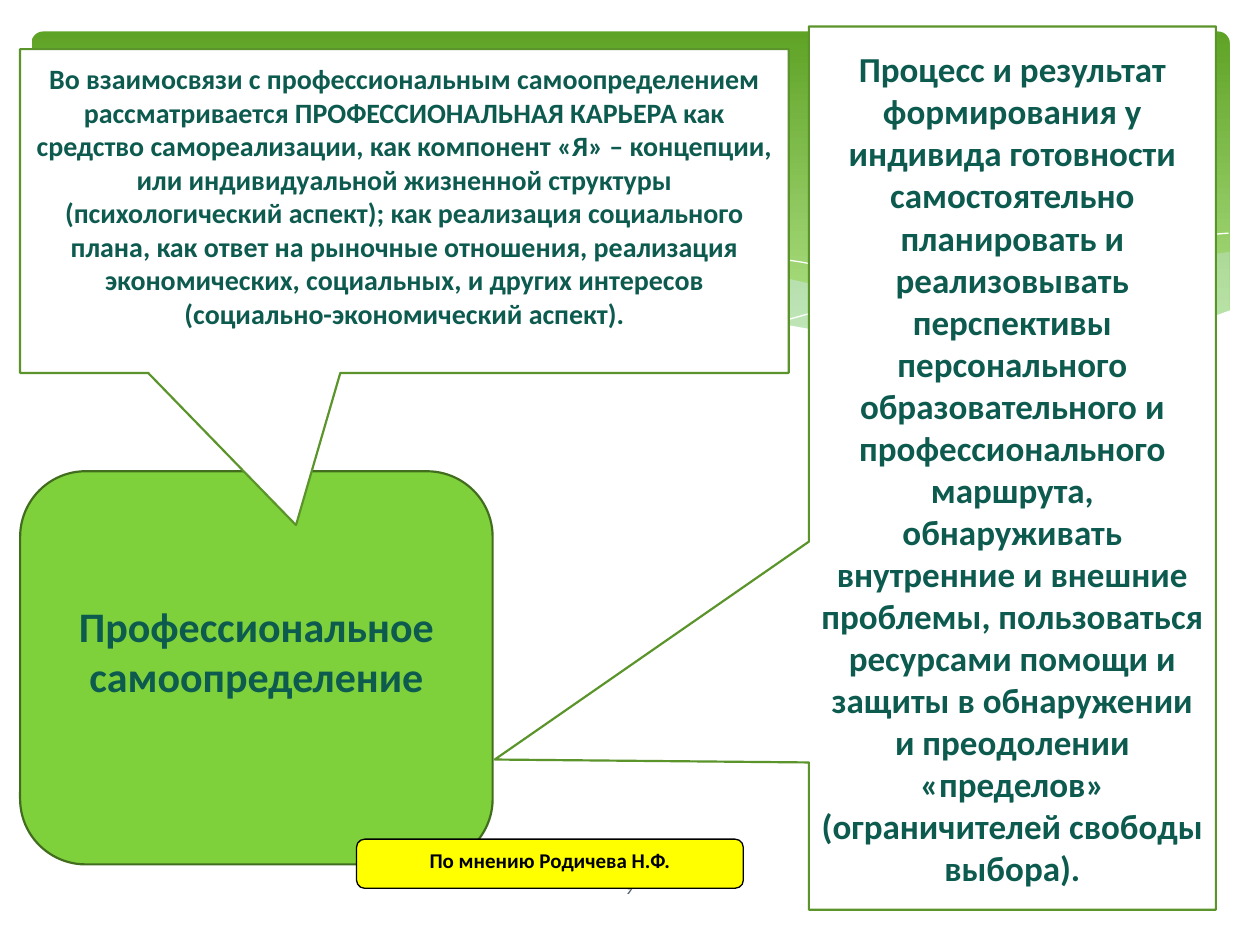
from lxml import etree
from pptx import Presentation
from pptx.dml.color import RGBColor
from pptx.enum.shapes import MSO_SHAPE as SHAPE
from pptx.enum.text import MSO_ANCHOR as ANCHOR, PP_ALIGN as ALIGN
from pptx.oxml.ns import qn
from pptx.util import Inches, Pt

FONT = "Calibri"
WHITE = RGBColor(0xFF, 0xFF, 0xFF)
BLACK = RGBColor(0x00, 0x00, 0x00)
YELLOW = RGBColor(0xFF, 0xFF, 0x00)
GREEN = RGBColor(0x7F, 0xD1, 0x3B)
GREEN_LINE = RGBColor(0x5A, 0x94, 0x2A)
DARK_LINE = RGBColor(0x42, 0x6D, 0x1F)
BANNER_TOP = RGBColor(0x5F, 0xA3, 0x26)
BANNER_BOTTOM = RGBColor(0xB2, 0xE3, 0x89)
MIST = RGBColor(0xD6, 0xEC, 0xFF)
TEAL = RGBColor(0x0D, 0x5A, 0x4F)
SLATE = RGBColor(0x4E, 0x5B, 0x6F)

# Content
CONCEPT = "Профессиональное самоопределение"
CAREER = (
    "Во взаимосвязи с профессиональным самоопределением рассматривается "
    "ПРОФЕССИОНАЛЬНАЯ КАРЬЕРА как средство самореализации, как компонент «Я» – "
    "концепции, или индивидуальной жизненной структуры (психологический аспект); "
    "как реализация социального плана, как ответ на рыночные отношения, реализация "
    "экономических, социальных, и других интересов (социально-экономический аспект).")
PROCESS = (
    "Процесс и результат формирования у индивида готовности самостоятельно "
    "планировать и реализовывать перспективы персонального образовательного и "
    "профессионального маршрута, обнаруживать внутренние и внешние проблемы, "
    "пользоваться ресурсами помощи и защиты в обнаружении и преодолении «пределов» "
    "(ограничителей свободы выбора).")
AUTHOR = "По мнению Родичева Н.Ф."
PAGE = "9"

# Banner waves, in hundredths of an inch: points, fill, opacity in percent
WAVES = [
    ([(975, 200), (948, 204), (921, 210), (891, 216), (861, 223), (805, 237),
      (753, 248), (706, 257), (661, 265), (691, 269), (732, 274), (769, 277),
      (803, 278), (844, 277), (881, 273), (913, 267), (942, 259), (963, 252),
      (976, 247), (976, 200)], MIST, 29),
    ([(893, 273), (837, 265), (775, 254), (706, 240), (629, 222), (584, 211),
      (541, 203), (489, 194), (442, 189), (399, 186), (361, 185), (328, 187),
      (286, 191), (342, 199), (404, 211), (449, 222), (530, 240), (601, 255),
      (665, 266), (722, 274), (773, 277), (818, 278), (857, 277), (893, 273)], MIST, 40),
    ([(309, 195), (344, 190), (387, 187), (433, 187), (489, 190), (533, 194),
      (582, 200), (636, 208), (695, 219), (760, 233), (831, 251), (907, 272)], None, 100),
    ([(613, 257), (653, 246), (695, 235), (748, 223), (806, 210), (866, 199),
      (910, 192), (951, 187), (975, 185)], None, 100),
    ([(977, 246), (950, 256), (920, 265), (887, 271), (850, 275), (809, 277),
      (761, 275), (708, 270), (648, 262), (579, 250), (503, 233), (447, 220),
      (391, 207), (340, 197), (292, 190), (250, 186), (211, 184), (161, 184),
      (119, 187), (85, 193), (59, 199), (40, 205), (23, 213), (23, 329),
      (977, 329)], WHITE, 100),
]


def add_text(shape, text, *, size, color=TEAL, bold=True, anchor=ANCHOR.MIDDLE, bottom=0.05):
    frame = shape.text_frame
    frame.word_wrap = True
    frame.vertical_anchor = anchor
    frame.margin_bottom = Inches(bottom)
    paragraph = frame.paragraphs[0]
    paragraph.alignment = ALIGN.CENTER
    run = paragraph.add_run()
    run.text = text
    font = run.font
    font.name, font.size, font.bold = FONT, Pt(size), bold
    font.color.rgb = color


def add_box(slide, kind, box, *, fill=WHITE, line=None, width=1.25, adjustments=()):
    shape = slide.shapes.add_shape(kind, *map(Inches, box))
    shape.shadow.inherit = False
    for index, value in enumerate(adjustments):
        shape.adjustments[index] = value
    shape.fill.solid()
    shape.fill.fore_color.rgb = fill
    if line is None:
        shape.line.fill.background()
    else:
        shape.line.color.rgb = line
        shape.line.width = Pt(width)
    return shape


def add_wave(slide, points, fill, opacity):
    builder = slide.shapes.build_freeform(*points[0], scale=Inches(0.01))
    builder.add_line_segments(points[1:], close=fill is not None)
    wave = builder.convert_to_shape()
    wave.shadow.inherit = False
    if fill is None:
        wave.fill.background()
        wave.line.color.rgb = WHITE
        wave.line.width = Pt(0)
        return
    wave.fill.solid()
    wave.fill.fore_color.rgb = fill
    wave.line.fill.background()
    if opacity < 100:
        color = wave.fill._xPr.find(qn("a:solidFill"))[0]
        etree.SubElement(color, qn("a:alpha")).set("val", str(opacity * 1000))


def main():
    presentation = Presentation()
    presentation.slide_width, presentation.slide_height = Inches(10), Inches(7.5)
    slide = presentation.slides.add_slide(presentation.slide_layouts[6])

    # Gradient banner with waves
    banner = add_box(slide, SHAPE.ROUNDED_RECTANGLE, (0.25, 0.25, 9.51, 2.7),
                     adjustments=[0.034])
    banner.fill.gradient()
    banner.fill.gradient_angle = 270
    stops = banner.fill.gradient_stops
    for stop, position, color in zip(stops, (0, 0.9), (BANNER_TOP, BANNER_BOTTOM)):
        stop.position = position
        stop.color.rgb = color
    for wave in WAVES:
        add_wave(slide, *wave)

    # Central concept
    concept = add_box(slide, SHAPE.ROUNDED_RECTANGLE, (0.16, 3.74, 3.75, 3.12),
                      fill=GREEN, line=DARK_LINE)
    add_text(concept, CONCEPT, size=24, bottom=0.32)

    # Callouts pointing at the concept, with the page number between them
    career = add_box(slide, SHAPE.RECTANGULAR_CALLOUT, (0.16, 0.39, 6.1, 2.57),
                     line=GREEN_LINE, adjustments=[-0.141, 0.97])
    add_text(career, CAREER, size=16, bottom=0.29)
    page = slide.shapes.add_textbox(*map(Inches, (4.36, 6.84, 1.27, 0.4)))
    add_text(page, PAGE, size=10, color=SLATE, bold=False)
    process = add_box(slide, SHAPE.RECTANGULAR_CALLOUT, (6.42, 0.21, 3.23, 7.01),
                      line=GREEN_LINE, adjustments=[-1.272, 0.33])
    add_text(process, PROCESS, size=20)

    # Attribution
    author = add_box(slide, SHAPE.ROUNDED_RECTANGLE, (2.83, 6.66, 3.07, 0.39),
                     fill=YELLOW, line=BLACK, width=0.75)
    add_text(author, AUTHOR, size=12, color=BLACK, anchor=ANCHOR.TOP)

    presentation.save("out.pptx")


if __name__ == "__main__":
    main()
